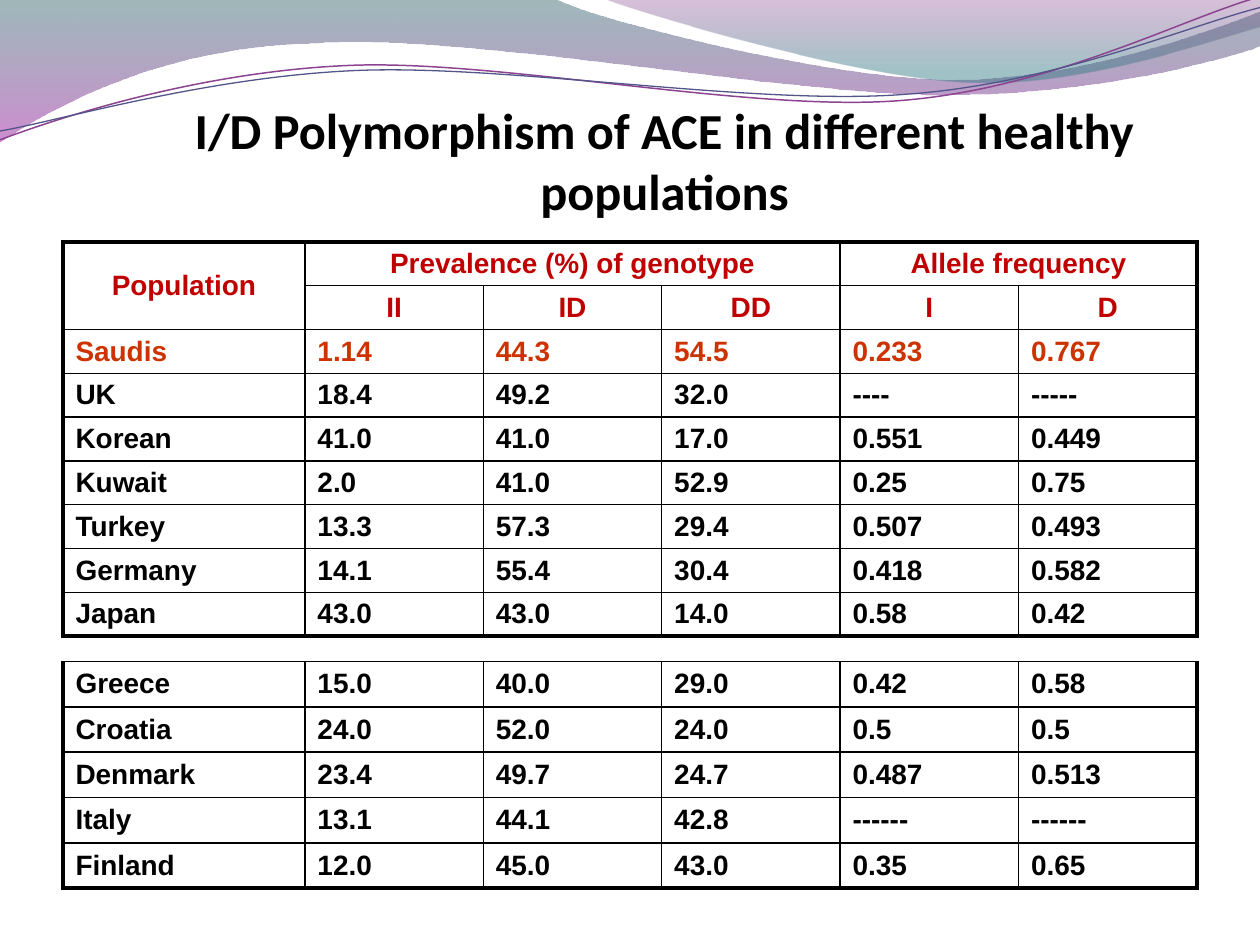
from dataclasses import dataclass

from lxml.etree import SubElement
from pptx import Presentation
from pptx.dml.color import RGBColor
from pptx.enum.text import MSO_ANCHOR, MSO_AUTO_SIZE, PP_ALIGN
from pptx.oxml.ns import qn
from pptx.util import Inches, Pt


@dataclass(frozen=True)
class Theme:
    """Colours, fonts and sizes of the slide."""
    black: str = "000000"
    header: str = "C00000"
    highlight: str = "CC3300"
    teal_dark: str = "2D6368"
    magenta: str = "A530A9"
    purple: str = "7F2F82"
    teal: str = "2F7B82"
    plum_line: str = "8D4490"
    indigo_line: str = "53548A"
    title_font: str = "Calibri"
    table_font: str = "Arial"
    title_size: float = 28.8
    table_size: float = 16
    thin: float = 1
    thick: float = 2.25


THEME = Theme()
COLUMN_WIDTHS = [1.92] + [1.416] * 5
HEADER_ROWS = [
    ["Population", "Prevalence (%) of genotype", "", "", "Allele frequency", ""],
    ["", "II", "ID", "DD", "I", "D"],
]
HEADER_MERGES = [((0, 0), (1, 0)), ((0, 1), (0, 3)), ((0, 4), (0, 5))]
UPPER_ROWS = [
    ["Saudis", "1.14", "44.3", "54.5", "0.233", "0.767"],
    ["UK", "18.4", "49.2", "32.0", "----", "-----"],
    ["Korean", "41.0", "41.0", "17.0", "0.551", "0.449"],
    ["Kuwait", "2.0", "41.0", "52.9", "0.25", "0.75"],
    ["Turkey", "13.3", "57.3", "29.4", "0.507", "0.493"],
    ["Germany", "14.1", "55.4", "30.4", "0.418", "0.582"],
    ["Japan", "43.0", "43.0", "14.0", "0.58", "0.42"],
]
LOWER_ROWS = [
    ["Greece", "15.0", "40.0", "29.0", "0.42", "0.58"],
    ["Croatia", "24.0", "52.0", "24.0", "0.5", "0.5"],
    ["Denmark", "23.4", "49.7", "24.7", "0.487", "0.513"],
    ["Italy", "13.1", "44.1", "42.8", "------", "------"],
    ["Finland", "12.0", "45.0", "43.0", "0.35", "0.65"],
]
LEFT_WAVE = [
    [(0, 0)], [(4.4, -0.01)],
    [(4.76, 0.17), (6.64, 0.63), (7.58, 0.63)],
    [(8.53, 0.63), (9.58, 0.26), (10, 0.09)],
    [(10.01, 0.36)],
    [(9.83, 0.44), (8.7, 0.76), (7.46, 0.75)],
    [(6.22, 0.75), (3.82, 0.28), (2.57, 0.34)],
    [(1.29, 0.36), (0.46, 0.83), (-0.01, 1.13)],
]
RIGHT_WAVE = [
    [(4.79, -0.01)],
    [(5.09, 0.11), (6.82, 0.62), (7.69, 0.65)],
    [(8.56, 0.69), (9.61, 0.32), (10, 0.21)],
    [(10, 0)],
]
PLUM_CURVE = [
    [(0, 1.11)],
    [(0.48, 0.93), (1.58, 0.57), (2.77, 0.52)],
    [(3.95, 0.47), (5.93, 0.89), (7.13, 0.8)],
    [(8.33, 0.71), (9.38, 0.15), (9.98, -0.02)],
]
INDIGO_CURVE = [
    [(0, 1.04)],
    [(0.47, 0.96), (1.64, 0.61), (2.83, 0.56)],
    [(4.03, 0.51), (5.97, 0.84), (7.17, 0.75)],
    [(8.36, 0.67), (9.41, 0.21), (10, 0.06)],
]


def write_text(frame, text, *, size, font, color, bold=True, align=PP_ALIGN.LEFT):
    """Write one formatted paragraph into a text frame."""
    paragraph = frame.paragraphs[0]
    paragraph.alignment = align
    run = paragraph.add_run()
    run.text = text
    run.font.size = Pt(size)
    run.font.name = font
    run.font.bold = bold
    run.font.color.rgb = RGBColor.from_string(color)


def add_curved_shape(slide, segments, *, close):
    """Add a freeform whose three-point segments are Bézier curves."""
    (start,), *rest = segments
    builder = slide.shapes.build_freeform(Inches(start[0]), Inches(start[1]))
    points = [(Inches(x), Inches(y)) for segment in rest for x, y in segment]
    builder.add_line_segments(points, close=close)
    shape = builder.convert_to_shape()
    shape.shadow.inherit = False
    lines = iter(shape.element.xpath(".//a:path/a:lnTo"))
    for segment in rest:
        steps = [next(lines) for _ in segment]
        if len(steps) == 3:
            steps[0].tag = qn("a:cubicBezTo")
            for step in steps[1:]:
                steps[0].append(step[0])
                step.getparent().remove(step)
    return shape


def add_wave(slide, segments, stops):
    """Add a closed wave with a translucent top-to-bottom gradient."""
    shape = add_curved_shape(slide, segments, close=True)
    shape.line.fill.background()
    shape.fill.gradient()
    shape.fill.gradient_angle = 270
    for stop, (position, color, opacity) in zip(shape.fill.gradient_stops, stops):
        stop.position = position
        stop.color.rgb = RGBColor.from_string(color)
    for element, (_, _, opacity) in zip(shape.element.xpath(".//a:gs/a:srgbClr"), stops):
        SubElement(element, qn("a:alpha"), val=str(opacity * 1000))


def add_curve(slide, segments, color, width):
    """Add an open curved line."""
    shape = add_curved_shape(slide, segments, close=False)
    shape.fill.background()
    shape.line.color.rgb = RGBColor.from_string(color)
    shape.line.width = Pt(width)


def add_title(slide, text):
    """Fill and place the title placeholder."""
    title = slide.shapes.title
    title.left, title.top = Inches(0.55), Inches(1.21)
    title.width, title.height = Inches(9.45), Inches(0.54)
    frame = title.text_frame
    frame.word_wrap = True
    frame.auto_size = MSO_AUTO_SIZE.NONE
    frame.vertical_anchor = MSO_ANCHOR.BOTTOM
    frame.margin_left = frame.margin_right = frame.margin_bottom = 0
    frame.margin_top = Inches(0.05)
    write_text(frame, text, size=THEME.title_size, font=THEME.title_font,
               color=THEME.black, align=PP_ALIGN.CENTER)


def set_borders(cell, outer, widths):
    """Draw a cell's borders; a cell hidden by a merge keeps only outer ones."""
    properties = cell._tc.get_or_add_tcPr()
    for side in "LRTB":
        if cell.is_spanned and side not in outer:
            continue
        width = widths[side] if side in outer else THEME.thin
        line = SubElement(properties, qn(f"a:ln{side}"), w=str(Pt(width)))
        fill = SubElement(line, qn("a:solidFill"))
        SubElement(fill, qn("a:srgbClr"), val=THEME.black)


def add_population_table(slide, rows, top, row_height, *, header_count=0,
                         merges=(), highlight=None, top_border=THEME.thick):
    """Add a bordered table of populations."""
    last_row, last_column = len(rows) - 1, len(COLUMN_WIDTHS) - 1
    table = slide.shapes.add_table(
        len(rows), len(COLUMN_WIDTHS), Inches(0.5), Inches(top),
        Inches(sum(COLUMN_WIDTHS)), Inches(row_height * len(rows))).table
    table.first_row = table.horz_banding = False
    for column, width in zip(table.columns, COLUMN_WIDTHS):
        column.width = Inches(width)
    for first, last in merges:
        table.cell(*first).merge(table.cell(*last))
    widths = dict.fromkeys("LRB", THEME.thick) | {"T": top_border}
    for i, values in enumerate(rows):
        table.rows[i].height = Inches(row_height)
        is_header = i < header_count
        color = (THEME.header if is_header
                 else THEME.highlight if values[0] == highlight else THEME.black)
        for j, value in enumerate(values):
            cell = table.cell(i, j)
            right = j + (cell.span_width if cell.is_merge_origin else 1) - 1
            edges = {"L": j == 0, "R": right == last_column,
                     "T": i == 0, "B": i == last_row}
            set_borders(cell, [side for side in edges if edges[side]], widths)
            cell.fill.background()
            cell.vertical_anchor = MSO_ANCHOR.MIDDLE
            cell.margin_top = cell.margin_bottom = Inches(0.04)
            if value:
                write_text(cell.text_frame, value, size=THEME.table_size,
                           font=THEME.table_font, color=color,
                           align=PP_ALIGN.CENTER if is_header else PP_ALIGN.LEFT)


def main():
    """Build and save the slide."""
    presentation = Presentation()
    presentation.slide_width, presentation.slide_height = Inches(10), Inches(7.5)
    slide = presentation.slides.add_slide(presentation.slide_layouts[5])
    add_wave(slide, LEFT_WAVE, [(0, THEME.teal_dark, 45), (1, THEME.magenta, 55)])
    add_wave(slide, RIGHT_WAVE, [(0, THEME.purple, 30), (0.8, THEME.teal, 45)])
    add_curve(slide, PLUM_CURVE, THEME.plum_line, 0.85)
    add_curve(slide, INDIGO_CURVE, THEME.indigo_line, 0.75)
    add_title(slide, "I/D Polymorphism of ACE in different healthy populations")
    add_population_table(slide, HEADER_ROWS + UPPER_ROWS, 1.92, 3.13 / 9,
                         header_count=len(HEADER_ROWS), merges=HEADER_MERGES,
                         highlight="Saudis")
    add_population_table(slide, LOWER_ROWS, 5.25, 0.36, top_border=THEME.thin)
    presentation.save("out.pptx")


if __name__ == "__main__":
    main()
